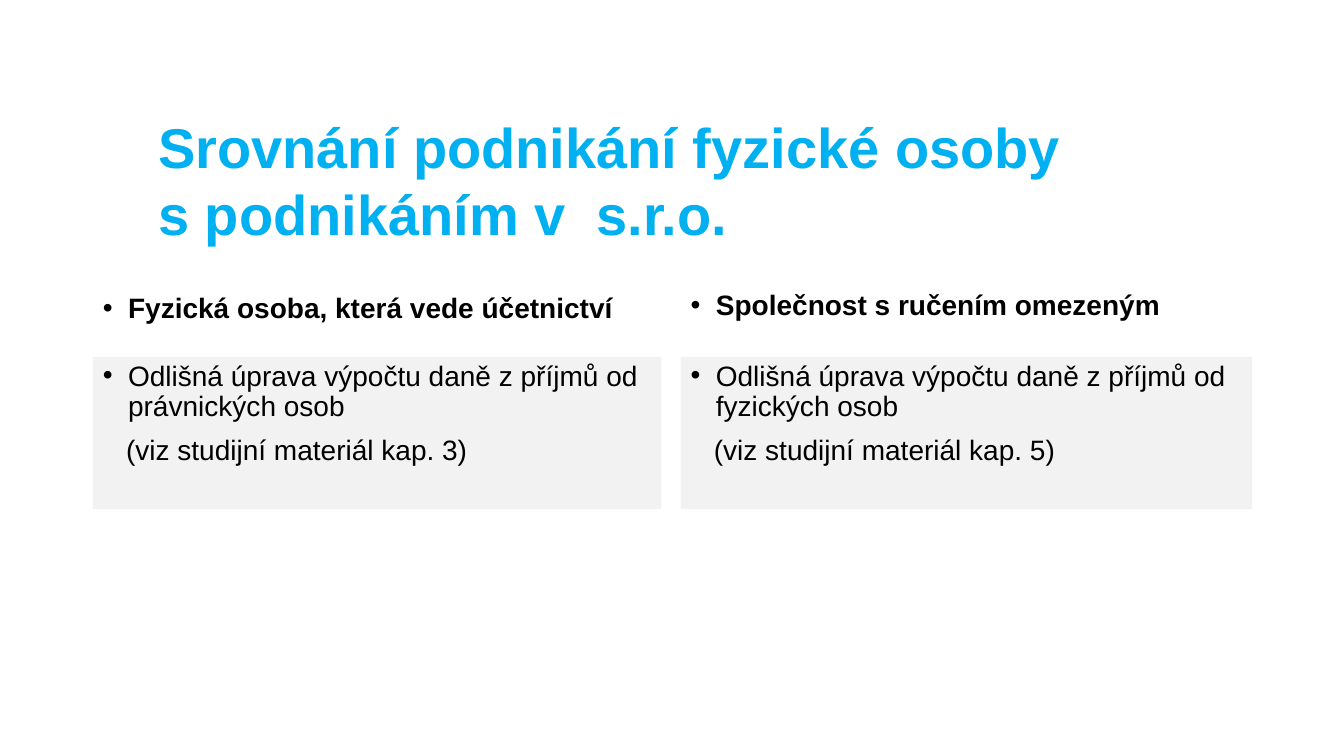
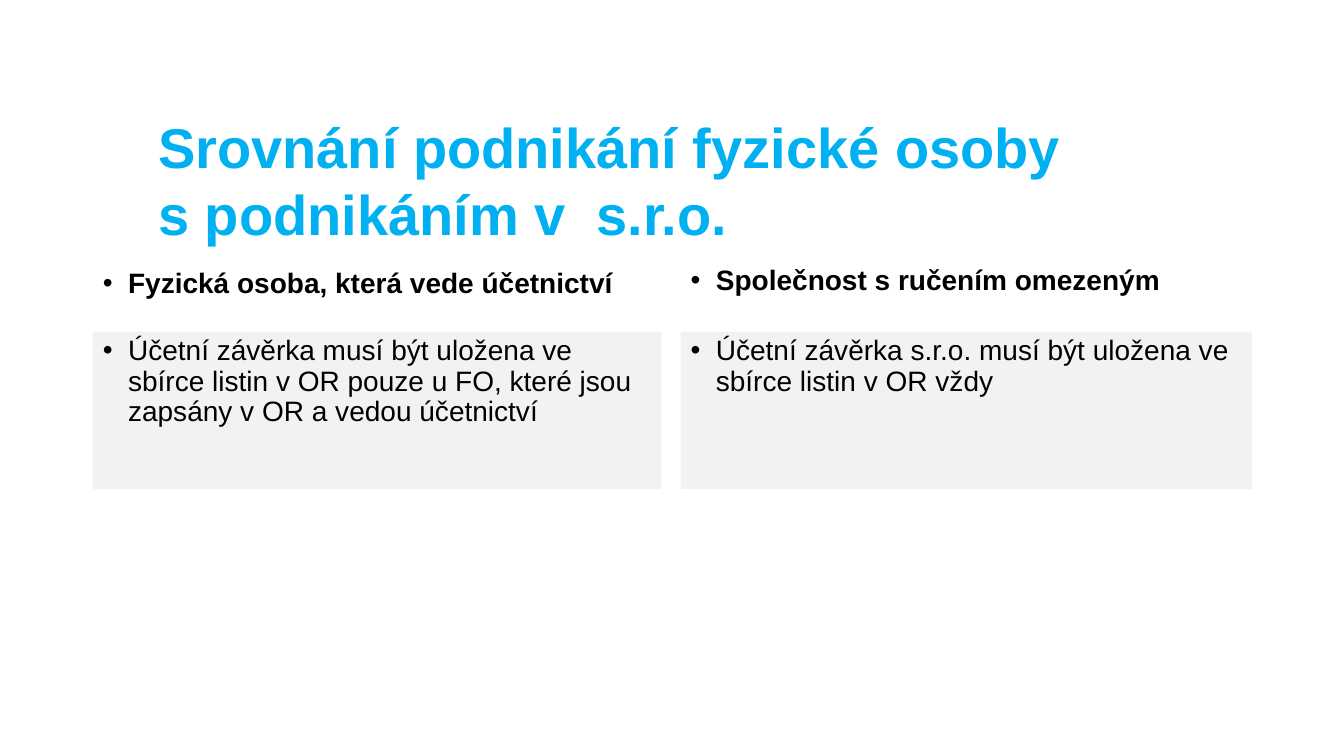
from dataclasses import dataclass

from lxml import etree
from pptx import Presentation
from pptx.dml.color import RGBColor
from pptx.enum.text import MSO_ANCHOR, MSO_AUTO_SIZE, PP_ALIGN
from pptx.oxml.ns import qn
from pptx.util import Inches, Pt

TOP, MIDDLE = MSO_ANCHOR.TOP, MSO_ANCHOR.MIDDLE
LEFT = PP_ALIGN.LEFT
NO_AUTOFIT = MSO_AUTO_SIZE.NONE
COMPARISON_LAYOUT = 4


@dataclass(frozen=True)
class Theme:
    font: str = "Arial"
    title_color: RGBColor = RGBColor(0x00, 0xB0, 0xF0)
    text_color: RGBColor = RGBColor(0x00, 0x00, 0x00)
    panel_color: RGBColor = RGBColor(0xF2, 0xF2, 0xF2)
    title_size: Pt = Pt(40)
    text_size: Pt = Pt(20)
    paragraph_gap: Pt = Pt(10)
    line_spacing: float = 0.9
    bullet_indent: float = 0.25
    note_indent: float = 0.23


class ComparisonDeck:
    """Build slides that compare two legal forms side by side."""

    def __init__(self, theme):
        self.theme = theme
        self.presentation = Presentation()
        self.presentation.slide_width = Inches(13.33)
        self.presentation.slide_height = Inches(7.5)
        self.slide = None

    def add_slide(self):
        layout = self.presentation.slide_layouts[COMPARISON_LAYOUT]
        self.slide = self.presentation.slides.add_slide(layout)

    def place(self, index, left, top, width, height, anchor):
        holder = self.slide.placeholders[index]
        holder.left, holder.top = Inches(left), Inches(top)
        holder.width, holder.height = Inches(width), Inches(height)
        frame = holder.text_frame
        frame.word_wrap = True
        frame.auto_size = NO_AUTOFIT
        frame.vertical_anchor = anchor
        return holder

    def style(self, paragraph, size, color, bold):
        paragraph.alignment = LEFT
        font = paragraph.font
        font.name, font.size, font.bold = self.theme.font, size, bold
        font.color.rgb = color

    def title(self, text):
        holder = self.place(0, 1.47, 1.31, 9.32, 0.94, MIDDLE)
        paragraph = holder.text_frame.paragraphs[0]
        paragraph.text = text
        self.style(paragraph, self.theme.title_size, self.theme.title_color, True)

    def fill_paragraph(self, paragraph, text, bullet, bold, gap):
        theme = self.theme
        paragraph.text = text
        paragraph.line_spacing = theme.line_spacing
        paragraph.space_before = gap
        properties = paragraph._p.get_or_add_pPr()
        margin = theme.bullet_indent if bullet else theme.note_indent
        properties.set("marL", str(Inches(margin)))
        properties.set("indent", str(Inches(-margin if bullet else 0)))
        if bullet:
            etree.SubElement(properties, qn("a:buFont")).set("typeface", theme.font)
            etree.SubElement(properties, qn("a:buChar")).set("char", "•")
        else:
            etree.SubElement(properties, qn("a:buNone"))
        self.style(paragraph, theme.text_size, theme.text_color, bold)

    def heading(self, index, text, left, top, width):
        holder = self.place(index, left, top, width, 0.41, TOP)
        self.fill_paragraph(holder.text_frame.paragraphs[0], text, True, True, Pt(0))

    def panel(self, index, point, note, left, top, width, height):
        holder = self.place(index, left, top, width, height, TOP)
        holder.fill.solid()
        holder.fill.fore_color.rgb = self.theme.panel_color
        frame = holder.text_frame
        self.fill_paragraph(frame.paragraphs[0], point, True, False, Pt(0))
        if note:
            gap = self.theme.paragraph_gap
            self.fill_paragraph(frame.add_paragraph(), note, False, False, gap)


TITLE = "Srovnání podnikání fyzické osoby s podnikáním v  s.r.o."
COLUMNS = [
    ("Fyzická osoba, která vede účetnictví", 0.92, 5.64, 0.67),
    ("Společnost s ručením omezeným", 6.75, 5.67, 0.7),
]
COMPARISONS = [
    (3.54, 1.51, [
        ("Odlišná úprava výpočtu daně z příjmů od právnických osob",
         "(viz studijní materiál kap. 3)"),
        ("Odlišná úprava výpočtu daně z příjmů od fyzických osob",
         "(viz studijní materiál kap. 5)"),
    ]),
    (3.29, 1.56, [
        ("Účetní závěrka musí být uložena ve sbírce listin v OR pouze u FO, "
         "které jsou zapsány v OR a vedou účetnictví", None),
        ("Účetní závěrka s.r.o. musí být uložena ve sbírce listin v OR vždy", None),
    ]),
]


def main():
    deck = ComparisonDeck(Theme())
    for panel_top, panel_height, statements in COMPARISONS:
        deck.add_slide()
        deck.title(TITLE)
        for number, (column, statement) in enumerate(zip(COLUMNS, statements)):
            name, left, width, heading_rise = column
            point, note = statement
            heading_index = 1 + 2 * number
            deck.heading(heading_index, name, left, panel_top - heading_rise, width)
            deck.panel(heading_index + 1, point, note, left, panel_top, width, panel_height)
    deck.presentation.save("out.pptx")


if __name__ == "__main__":
    main()
